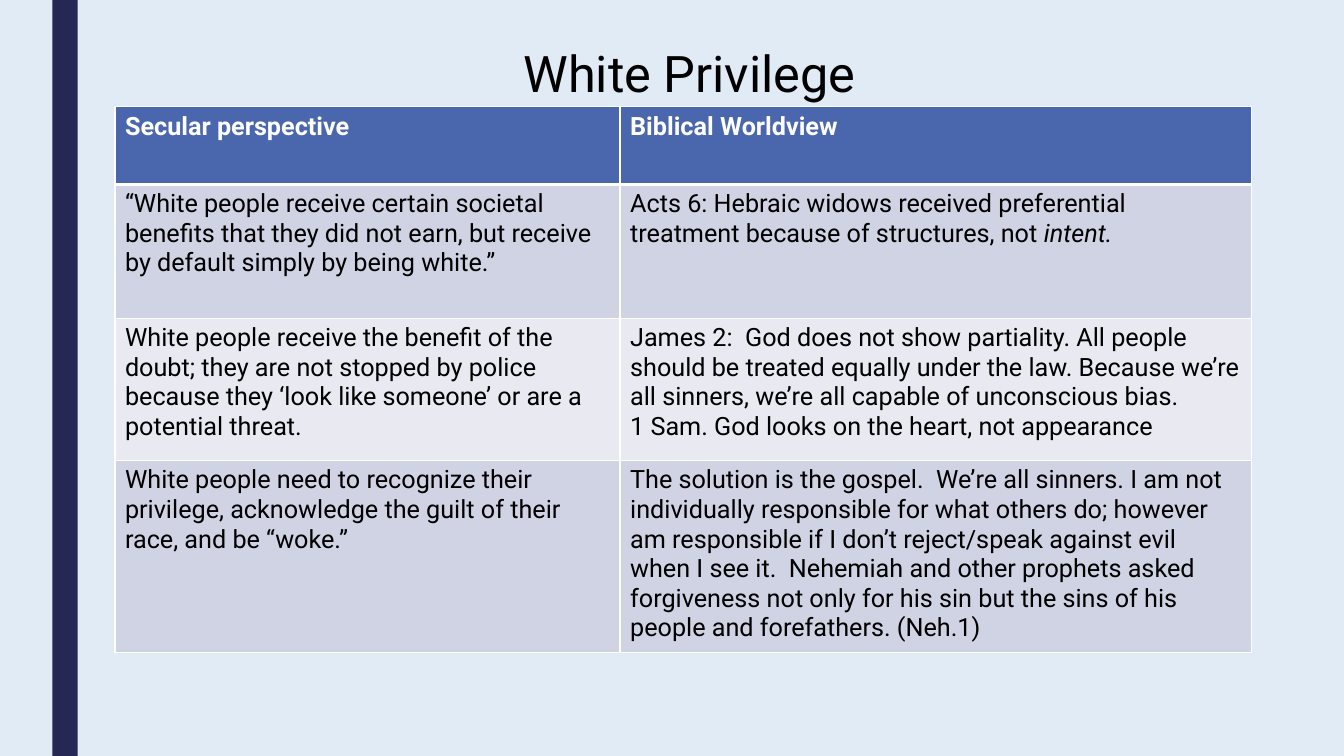
from dataclasses import dataclass

from lxml import etree
from pptx import Presentation
from pptx import util as u
from pptx.dml.color import RGBColor
from pptx.enum import shapes, text
from pptx.oxml import ns


@dataclass(frozen=True)
class Theme:
    font: str = "Roboto"
    title: int = 36
    body: int = 18
    back: str = "E0EBF6"
    bar: str = "242852"
    header: str = "4A66AC"
    bands: tuple = ("D0D3E3", "E9EAF1")
    ink: str = "000000"
    white: str = "FFFFFF"


T = Theme()


def add_text(p, words, size=T.body, color=T.ink, bold=False, italic=False):
    r = p.add_run()
    r.text = words
    r.font.name = T.font
    r.font.size = u.Pt(size)
    r.font.color.rgb = RGBColor.from_string(color)
    r.font.bold = bold
    r.font.italic = italic


def add_border(cell, side, width):
    ln = etree.SubElement(cell._tc.get_or_add_tcPr(), ns.qn(f"a:ln{side}"), w=str(u.Pt(width)))
    fill = etree.SubElement(ln, ns.qn("a:solidFill"))
    etree.SubElement(fill, ns.qn("a:srgbClr"), val=T.white)


prs = Presentation()
prs.slide_width = u.Inches(13.33)
prs.slide_height = u.Inches(7.5)
s = prs.slides.add_slide(prs.slide_layouts[5])
s.background.fill.solid()
s.background.fill.fore_color.rgb = RGBColor.from_string(T.back)

bar = s.shapes.add_shape(
    shapes.MSO_SHAPE.RECTANGLE, u.Inches(0.52), 0, u.Inches(0.25), prs.slide_height
)
bar.shadow.inherit = False
bar.fill.solid()
bar.fill.fore_color.rgb = RGBColor.from_string(T.bar)
bar.line.fill.background()

title = s.shapes.title
title.left, title.top = u.Inches(1.53), u.Inches(0.36)
title.width, title.height = u.Inches(10.62), u.Inches(0.71)
tf = title.text_frame
tf.auto_size = text.MSO_AUTO_SIZE.NONE
tf.vertical_anchor = text.MSO_ANCHOR.MIDDLE
tf.paragraphs[0].alignment = text.PP_ALIGN.CENTER
add_text(tf.paragraphs[0], "White Privilege", size=T.title)

rows = [
    ("Secular perspective", "Biblical Worldview"),
    (
        "“White people receive certain societal benefits that they did not earn, "
        "but receive by default simply by being white.”",
        "Acts 6: Hebraic widows received preferential treatment because of structures, not *intent.",
    ),
    (
        "White people receive the benefit of the doubt; they are not stopped by police "
        "because they ‘look like someone’ or are a potential threat.",
        "James 2:  God does not show partiality. All people should be treated equally under "
        "the law. Because we’re all sinners, we’re all capable of unconscious bias.\n"
        "1 Sam. God looks on the heart, not appearance",
    ),
    (
        "White people need to recognize their privilege, acknowledge the guilt of their race, "
        "and be “woke.”",
        "The solution is the gospel.  We’re all sinners. I am not individually responsible for "
        "what others do; however am responsible if I don’t reject/speak against evil when I see "
        "it.  Nehemiah and other prophets asked forgiveness not only for his sin but the sins of "
        "his people and forefathers. (Neh.1)",
    ),
]
widths = [5.01, 6.26]
heights = [0.77, 1.33, 1.41, 1.9]
table = s.shapes.add_table(
    len(rows), len(widths), u.Inches(1.14), u.Inches(1.06),
    u.Inches(sum(widths)), u.Inches(sum(heights)),
).table
for column, width in zip(table.columns, widths):
    column.width = u.Inches(width)

for i, (row, height) in enumerate(zip(rows, heights)):
    table.rows[i].height = u.Inches(height)
    header = i == 0
    for j, words in enumerate(row):
        cell = table.cell(i, j)
        for side in "LRTB":
            heavy = (i, side) in ((0, "B"), (1, "T"))
            add_border(cell, side, 3 if heavy else 1)
        cell.fill.solid()
        cell.fill.fore_color.rgb = RGBColor.from_string(
            T.header if header else T.bands[(i - 1) % 2]
        )
        tf = cell.text_frame
        for k, line in enumerate(words.split("\n")):
            p = tf.add_paragraph() if k else tf.paragraphs[0]
            for n, part in enumerate(line.split("*")):
                add_text(p, part, color=T.white if header else T.ink, bold=header, italic=n == 1)

prs.save("out.pptx")
